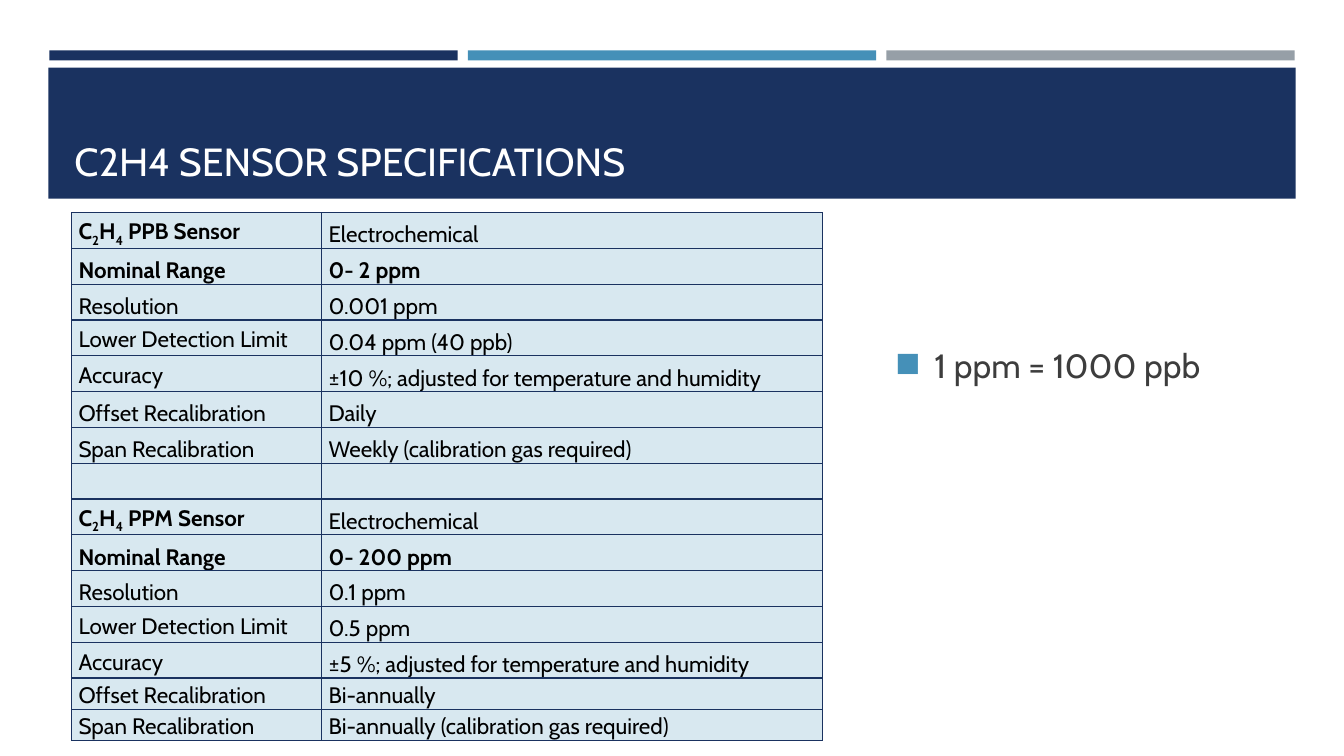
from lxml import etree
from pptx import Presentation
from pptx import util as u
from pptx.dml.color import RGBColor
from pptx.enum import shapes, text
from pptx.oxml.ns import qn

NAVY, BLUE, GRAY, PALE = "1A3260", "4590B8", "969FA7", "D8E8F0"
TOP, MIDDLE, BOTTOM = text.MSO_ANCHOR.TOP, text.MSO_ANCHOR.MIDDLE, text.MSO_ANCHOR.BOTTOM


def rgb(value):
    return RGBColor.from_string(value)


def add_run(p, words, size, color, bold=False):
    r = p.add_run()
    r.text = words
    for name, value in {"name": "Cabin", "size": u.Pt(size), "bold": bold}.items():
        setattr(r.font, name, value)
    r.font.color.rgb = rgb(color)
    return r


prs = Presentation()
prs.slide_width, prs.slide_height = u.Inches(13.33), u.Inches(7.5)
s = prs.slides.add_slide(prs.slide_layouts[6])

bars = [(0.49 + 4.15 * i, 0.5, 4.05, 0.1, color) for i, color in enumerate([NAVY, BLUE, GRAY])]
for x, y, w, h, color in bars + [(0.48, 0.67, 12.37, 1.3, NAVY)]:
    sp = s.shapes.add_shape(shapes.MSO_SHAPE.RECTANGLE, *map(u.Inches, (x, y, w, h)))
    sp.shadow.inherit = False
    sp.fill.solid()
    sp.fill.fore_color.rgb = rgb(color)
    sp.line.fill.background()

boxes = [
    ((0.64, 0.77, 12.06, 1.11), "C2H4 SENSOR SPECIFICATIONS", 28, "FFFFFF", BOTTOM, 0.05),
    ((8.78, 2.25, 3.34, 3.1), "1 ppm = 1000 ppb", 24, "3D3D3D", MIDDLE, 0.41),
]
for place, words, size, color, anchor, inset in boxes:
    tf = s.shapes.add_textbox(*map(u.Inches, place)).text_frame
    for name, value in {"word_wrap": True, "vertical_anchor": anchor,
                        "margin_bottom": u.Inches(inset)}.items():
        setattr(tf, name, value)
    add_run(tf.paragraphs[0], words, size, color)

pPr = tf.paragraphs[0]._p.get_or_add_pPr()
pPr.set("marL", str(u.Inches(0.39)))
pPr.set("indent", str(-u.Inches(0.39)))
bullet_color = etree.SubElement(pPr, qn("a:buClr"))
etree.SubElement(bullet_color, qn("a:srgbClr"), val=BLUE)
etree.SubElement(pPr, qn("a:buSzPct"), val="92000")
etree.SubElement(pPr, qn("a:buChar"), char="◼")

rows = [
    ("C2H4 PPB Sensor", "Electrochemical"),
    ("Nominal Range", "0- 2 ppm"),
    ("Resolution", "0.001 ppm"),
    ("Lower Detection Limit", "0.04 ppm (40 ppb)"),
    ("Accuracy", "±10 %; adjusted for temperature and humidity"),
    ("Offset Recalibration", "Daily"),
    ("Span Recalibration", "Weekly (calibration gas required)"),
    ("", ""),
    ("C2H4 PPM Sensor", "Electrochemical"),
    ("Nominal Range", "0- 200 ppm"),
    ("Resolution", "0.1 ppm"),
    ("Lower Detection Limit", "0.5 ppm"),
    ("Accuracy", "±5 %; adjusted for temperature and humidity"),
    ("Offset Recalibration", "Bi-annually"),
    ("Span Recalibration", "Bi-annually (calibration gas required)"),
]
table = s.shapes.add_table(len(rows), 2, *map(u.Inches, (0.71, 2.11, 7.45, 5.24))).table
table.first_row = table.horz_banding = False
for column, width in zip(table.columns, (2.48, 4.97)):
    column.width = u.Inches(width)

for i, row in enumerate(rows):
    table.rows[i].height = u.Inches(4.62 / 13 if i < 13 else 0.31)
    for j, words in enumerate(row):
        cell = table.cell(i, j)
        centred = words in ("Lower Detection Limit", "Accuracy")
        anchor = MIDDLE if centred else BOTTOM if words else TOP
        for name, value in {"margin_left": u.Inches(0.07), "margin_right": u.Inches(0.07),
                            "margin_top": 0, "margin_bottom": 0,
                            "vertical_anchor": anchor}.items():
            setattr(cell, name, value)

        tcPr = cell._tc.get_or_add_tcPr()
        for side in ("a:lnL", "a:lnR", "a:lnT", "a:lnB"):
            ln = etree.SubElement(tcPr, qn(side), w=str(u.Pt(1)))
            fill = etree.SubElement(ln, qn("a:solidFill"))
            etree.SubElement(fill, qn("a:srgbClr"), val=NAVY)
        cell.fill.solid()
        cell.fill.fore_color.rgb = rgb(PALE)

        p = cell.text_frame.paragraphs[0]
        p.line_spacing = 1.15
        formula = words.startswith("C2H4")
        pieces = ["C", "2", "H", "4", words[4:]] if formula else [words] if words else []
        for piece in pieces:
            bold = formula or row[0] == "Nominal Range"
            r = add_run(p, piece, 16, "000000", bold)
            if formula and piece in "24":
                r._r.get_or_add_rPr().set("baseline", "-25000")

prs.save("out.pptx")
